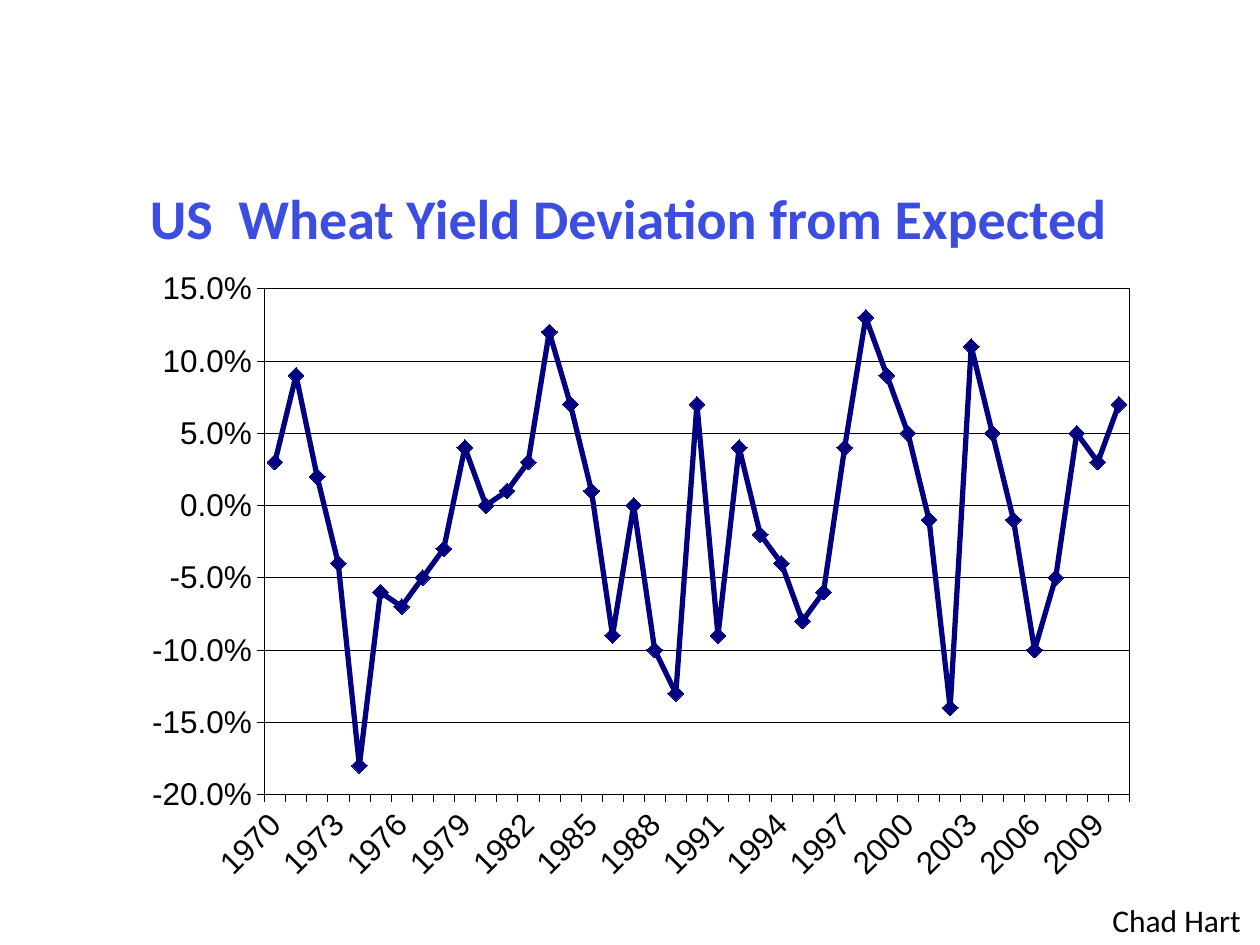
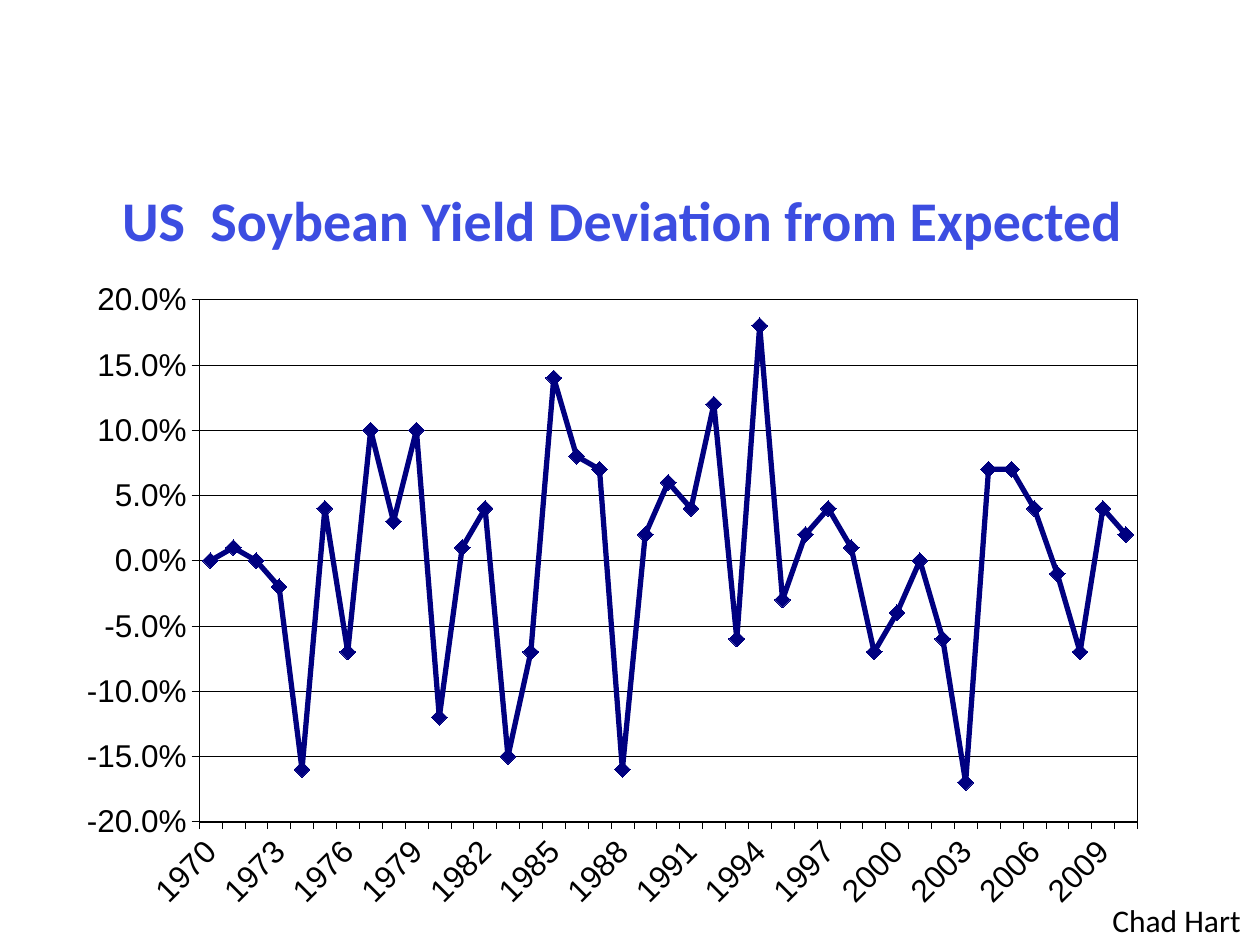
from lxml import etree
from pptx import Presentation
from pptx.chart.data import CategoryChartData
from pptx.dml.color import RGBColor
from pptx.enum.chart import XL_AXIS_CROSSES, XL_CHART_TYPE, XL_MARKER_STYLE, XL_TICK_LABEL_POSITION, XL_TICK_MARK
from pptx.enum.text import MSO_ANCHOR, PP_ALIGN
from pptx.oxml import parse_xml
from pptx.oxml.ns import nsdecls, qn
from pptx.util import Inches, Pt

COLORS = {"title": "3C4DE1", "text": "000000", "series": "000080", "background": "FFFFFF"}
YEARS = [str(year) for year in range(1970, 2011)]
PLOT_LAYOUT = {"x": 0.121, "y": 0.048, "w": 0.867, "h": 0.8}

# Deviations are fractions of the expected yield, one for each year.
CROPS = [
    {
        "title": "US  Wheat Yield Deviation from Expected ",
        "title_at": (0.59, 1.41),
        "chart_at": (1.14, 2.05, 7.92, 5.02),
        "maximum": 0.15,
        "deviations": [
            0.03, 0.09, 0.02, -0.04, -0.18, -0.06, -0.07, -0.05, -0.03, 0.04,
            0, 0.01, 0.03, 0.12, 0.07, 0.01, -0.09, 0, -0.1, -0.13,
            0.07, -0.09, 0.04, -0.02, -0.04, -0.08, -0.06, 0.04, 0.13, 0.09,
            0.05, -0.01, -0.14, 0.11, 0.05, -0.01, -0.1, -0.05, 0.05, 0.03, 0.07,
        ],
    },
    {
        "title": "US  Soybean Yield Deviation from Expected ",
        "title_at": (0.54, 1.42),
        "chart_at": (0.54, 2.13, 8.59, 5.18),
        "maximum": 0.2,
        "deviations": [
            0, 0.01, 0, -0.02, -0.16, 0.04, -0.07, 0.1, 0.03, 0.1,
            -0.12, 0.01, 0.04, -0.15, -0.07, 0.14, 0.08, 0.07, -0.16, 0.02,
            0.06, 0.04, 0.12, -0.06, 0.18, -0.03, 0.02, 0.04, 0.01, -0.07,
            -0.04, 0, -0.06, -0.17, 0.07, 0.07, 0.04, -0.01, -0.07, 0.04, 0.02,
        ],
    },
]


def style_font(font, name, size, color, bold=False):
    font.name = name
    font.size = Pt(size)
    font.bold = bold
    font.color.rgb = RGBColor.from_string(COLORS[color])


def style_line(line, width, color):
    line.width = Pt(width)
    line.color.rgb = RGBColor.from_string(COLORS[color])


deck = Presentation()
deck.slide_width = Inches(10)
deck.slide_height = Inches(7.5)
background = deck.slide_master.background.fill
background.solid()
background.fore_color.rgb = RGBColor.from_string(COLORS["background"])
title_only = deck.slide_layouts[5]

for crop in CROPS:
    page = deck.slides.add_slide(title_only)

    # Chart
    data = CategoryChartData(number_format="0.0%")
    data.categories = YEARS
    data.add_series("Series 1", crop["deviations"])
    chart = page.shapes.add_chart(
        XL_CHART_TYPE.LINE_MARKERS, *[Inches(length) for length in crop["chart_at"]], data
    ).chart
    chart.has_title = False
    chart.has_legend = False
    style_font(chart.font, "Arial", 18, "text")

    plot = chart.plots[0]
    plot.vary_by_categories = False
    series = plot.series[0]
    series.smooth = False
    style_line(series.format.line, 3, "series")
    series.marker.style = XL_MARKER_STYLE.DIAMOND
    series.marker.size = 9
    series.marker.format.fill.solid()
    series.marker.format.fill.fore_color.rgb = RGBColor.from_string(COLORS["series"])
    style_line(series.marker.format.line, 0.75, "series")

    # Axes
    year_axis, percent_axis = chart.category_axis, chart.value_axis
    for axis in (year_axis, percent_axis):
        axis.major_tick_mark = XL_TICK_MARK.OUTSIDE
        axis.minor_tick_mark = XL_TICK_MARK.NONE
        axis.tick_label_position = XL_TICK_LABEL_POSITION.LOW
        style_line(axis.format.line, 0.25, "text")
        style_font(axis.tick_labels.font, "Arial", 18, "text")
    percent_axis.minimum_scale = -0.2
    percent_axis.maximum_scale = crop["maximum"]
    percent_axis.major_unit = 0.05
    percent_axis.crosses = XL_AXIS_CROSSES.MINIMUM
    percent_axis.has_major_gridlines = True
    style_line(percent_axis.major_gridlines.format.line, 0.25, "text")
    percent_axis.tick_labels.number_format = "0.0%"
    percent_axis.tick_labels.number_format_is_linked = False

    # Slanted label for every third year, a tick for each year
    axis_xml = year_axis._element
    axis_xml.find(qn("c:txPr")).find(qn("a:bodyPr")).set("rot", "-2700000")
    last_option = axis_xml.find(qn("c:noMultiLvlLbl"))
    for tag, step in (("c:tickLblSkip", "3"), ("c:tickMarkSkip", "1")):
        last_option.addprevious(etree.Element(qn(tag), val=step))

    # Plot area: fixed inner position and a thin frame
    plot_area = chart._chartSpace.chart.plotArea
    for layout in plot_area.findall(qn("c:layout")):
        plot_area.remove(layout)
    places = "".join(f'<c:{side}Mode val="edge"/>' for side in "xy")
    places += "".join(f'<c:{side} val="{value}"/>' for side, value in PLOT_LAYOUT.items())
    plot_area.insert(0, parse_xml(
        f'<c:layout {nsdecls("c")}><c:manualLayout><c:layoutTarget val="inner"/>'
        f'{places}</c:manualLayout></c:layout>'
    ))
    plot_area.append(parse_xml(
        f'<c:spPr {nsdecls("c", "a")}><a:noFill/><a:ln w="3175"><a:solidFill>'
        f'<a:srgbClr val="{COLORS["text"]}"/></a:solidFill></a:ln></c:spPr>'
    ))

    # Title
    title = page.shapes.title
    title.left, title.top = [Inches(length) for length in crop["title_at"]]
    title.width, title.height = Inches(8.9), Inches(0.64)
    title.text_frame.text = crop["title"]
    title.text_frame.vertical_anchor = MSO_ANCHOR.TOP
    paragraph = title.text_frame.paragraphs[0]
    paragraph.alignment = PP_ALIGN.CENTER
    style_font(paragraph.runs[0].font, "Calibri", 32, "title", bold=True)

    # Author
    author = page.shapes.add_textbox(Inches(8.73), Inches(7.1), Inches(1.23), Inches(0.4))
    author.text_frame.word_wrap = False
    author.text_frame.text = "Chad Hart"
    style_font(author.text_frame.paragraphs[0].runs[0].font, "Calibri", 18, "text")

deck.save("out.pptx")
